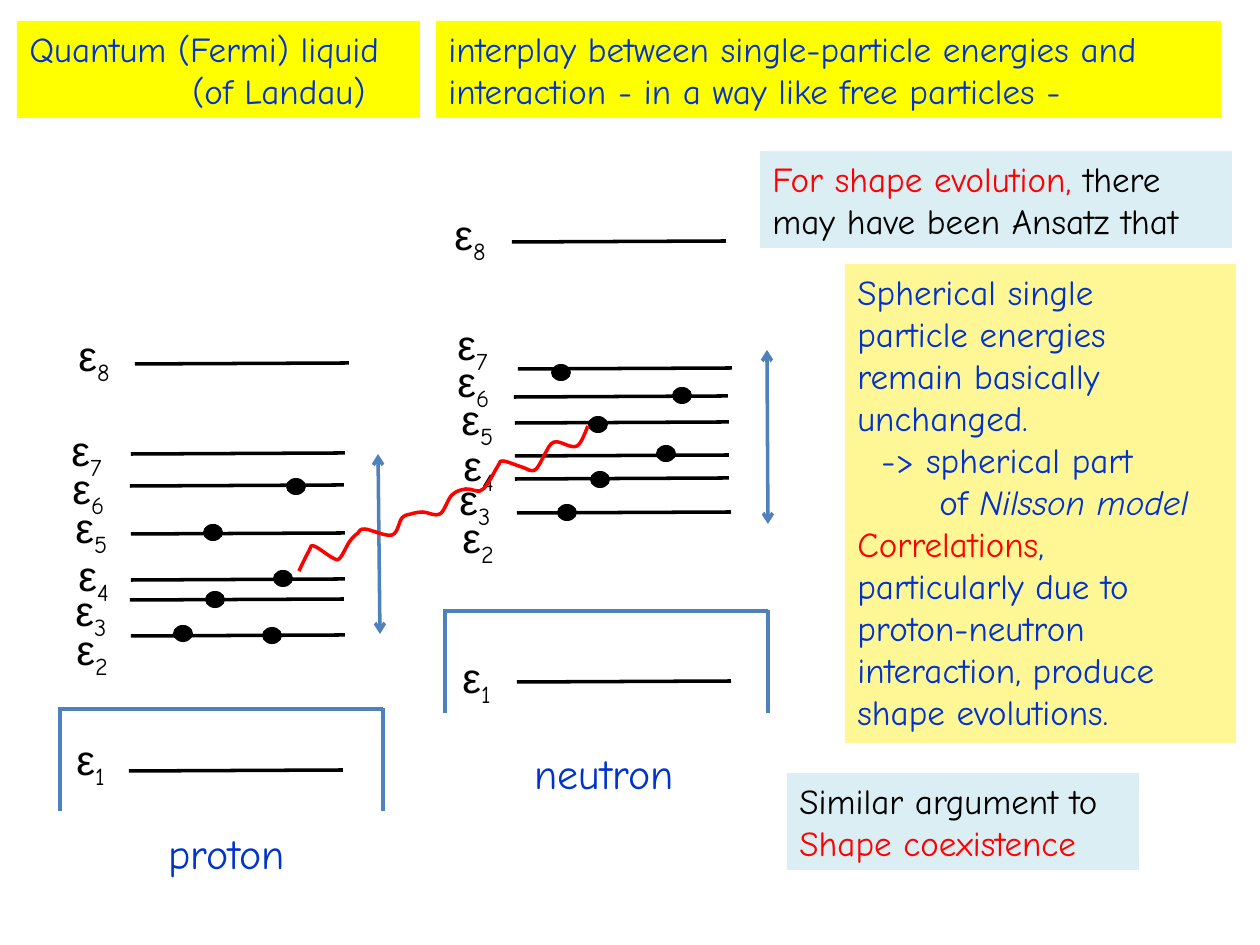
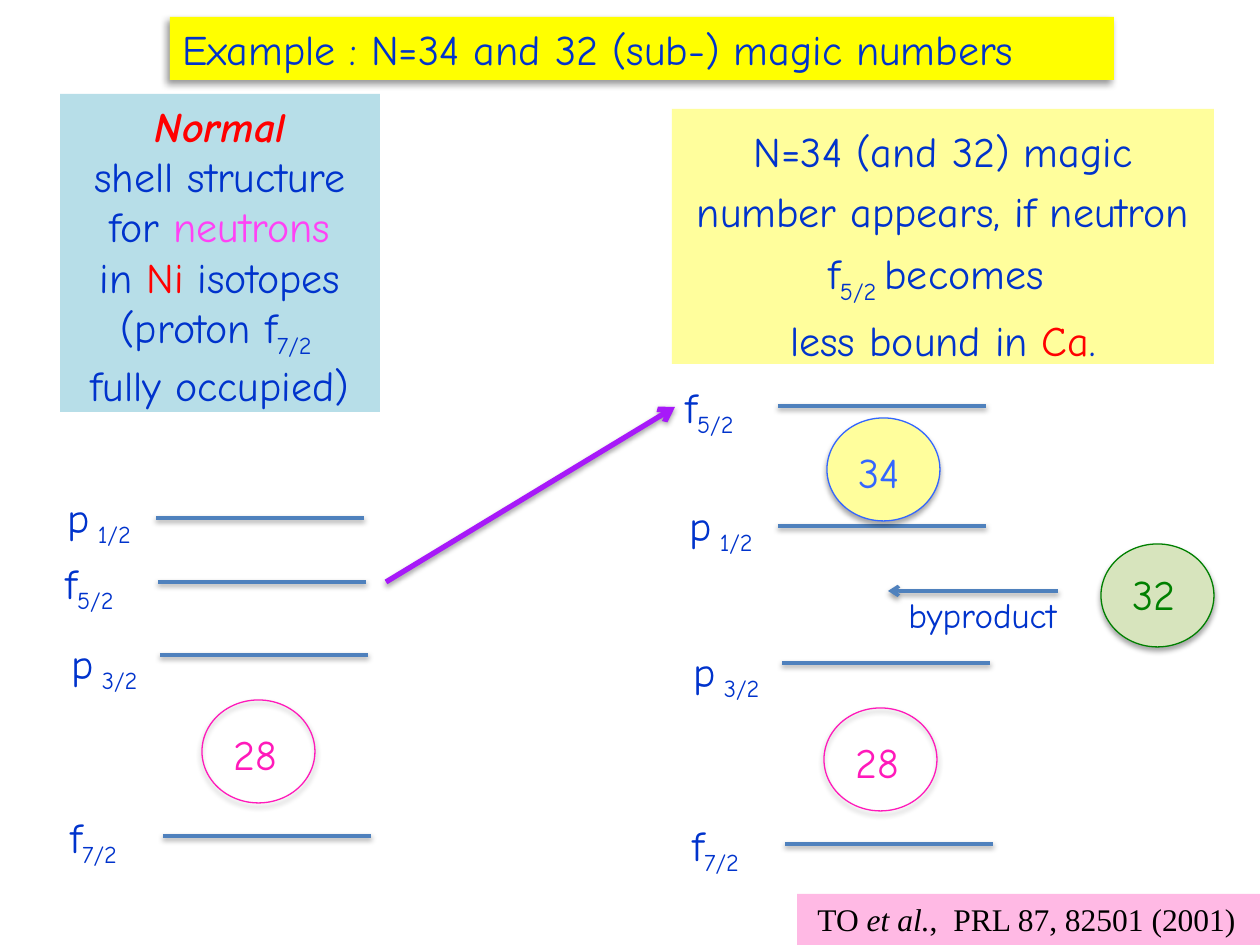
from lxml import etree
from pptx import Presentation
from pptx import util as u
from pptx.dml.color import RGBColor
from pptx.enum import shapes, text
from pptx.oxml.ns import qn

EMU_PER_PX = 914400 / 126
HAND, PLAIN, SERIF = "Comic Neue", "Arial", "Times New Roman"
BLACK, INK, RED, STEEL = "000000", "0033CC", "FF0000", "4F81BD"
YELLOW, CREAM, STRAW, ICE = "FFFF00", "FFFE9C", "FFF796", "DBEEF4"
SKY, ROSE, SAGE = "B7DEE8", "FFB9E4", "D7E4BD"
PINK, MAGENTA, BLUE, GREEN, PURPLE = "FF1ABA", "FF42F5", "3366FF", "008000", "A719F9"
LINE_SHADOW, DISC_SHADOW, TITLE_SHADOW = (38, 3.1, 1.6, 90), (35, 3.1, 1.8, 90), (40, 4, 3, 135)
OVAL, RECT = shapes.MSO_SHAPE.OVAL, shapes.MSO_SHAPE.RECTANGLE

PROTON_LEVELS = [
    ((4, 18), (69, 62), []),
    ((4, -92), (71, -73), [(42, -11), (131, -9)]),
    ((3, -131), (70, -109), [(75, -9)]),
    ((6, -166), (71, -129), [(142, -10)]),
    ((3, -214), (71, -175), [(72, -10)]),
    ((0, -253), (70, -223), [(156, -8)]),
    ((-1, -291), (71, -255), []),
    ((6, -386), (75, -345), []),
]
NEUTRON_LEVELS = [
    ((5, 34), (72, 71), []),
    ((5, -106), (72, -98), [(40, -9)]),
    ((2, -144), (70, -132), [(75, -8)]),
    ((6, -178), (70, -155), [(141, -11)]),
    ((4, -224), (70, -188), [(73, -7)]),
    ((0, -262), (69, -214), [(158, -10)]),
    ((0, -299), (73, -242), [(33, -5)]),
    ((-3, -409), (67, -369), []),
]
WAVE = [
    (299, 571), (309, 551), (314, 546), (333, 558), (340, 558), (350, 541), (358, 533),
    (365, 529), (392, 535), (402, 518), (411, 514), (423, 512), (440, 514), (452, 495),
    (466, 489), (480, 491), (488, 483), (498, 466), (503, 461), (522, 467), (535, 470),
    (546, 452), (551, 444), (558, 442), (577, 446), (588, 426),
]


def px(length):
    """Turn px into EMU."""
    return u.Emu(round(length * EMU_PER_PX))


def rgb(value):
    """Turn a hex string into a colour."""
    return RGBColor.from_string(value)


def style(font, size=None, name=None, color=None, bold=None, italic=None):
    """Set the given font properties."""
    if size:
        font.size = u.Pt(size)
    if name:
        font.name = name
    if color:
        font.color.rgb = rgb(color)
    if bold is not None:
        font.bold = bold
    if italic is not None:
        font.italic = italic


def sub(letters):
    """Describe a subscript run."""
    return letters, {"lowered": True}


def write(frame, paragraphs, size=20, color=INK, name=HAND, center=False, spacing=None, indents=None):
    """Fill a text frame; a paragraph is a list of strings or (string, style) pairs."""
    frame.vertical_anchor = text.MSO_ANCHOR.TOP
    for number, runs in enumerate(paragraphs):
        paragraph = frame.add_paragraph() if number else frame.paragraphs[0]
        paragraph.alignment = text.PP_ALIGN.CENTER if center else text.PP_ALIGN.LEFT
        if spacing:
            paragraph.line_spacing = spacing
        if indents and number in indents:
            paragraph._p.get_or_add_pPr().set("marL", str(px(indents[number])))
        style(paragraph.font, size, name, color)
        for item in runs:
            words, look = (item, {}) if isinstance(item, str) else item
            run = paragraph.add_run()
            run.text = words
            if look.get("lowered"):
                run._r.get_or_add_rPr().set("baseline", "-25000")
            else:
                style(run.font, **look)


def cast_shadow(effects, alpha, blur, distance, angle):
    """Add a black outer shadow to an effect list."""
    shadow = etree.SubElement(
        effects, qn("a:outerShdw"), blurRad=str(u.Pt(blur)), dist=str(u.Pt(distance)),
        dir=str(angle * 60000), rotWithShape="0")
    black = etree.SubElement(shadow, qn("a:srgbClr"), val=BLACK)
    etree.SubElement(black, qn("a:alpha"), val=str(alpha * 1000))


def line(slide, start, end, color=STEEL, width=2, ends=(), shadow=None):
    """Draw a straight line, with arrowheads at the named ends."""
    stroke = slide.shapes.add_connector(
        shapes.MSO_CONNECTOR.STRAIGHT, *map(px, (*start, *end)))
    stroke.line.color.rgb = rgb(color)
    stroke.line.width = u.Pt(width)
    for end_name in ends:
        etree.SubElement(stroke.line._get_or_add_ln(), qn(f"a:{end_name}"), type="arrow")
    effects = etree.SubElement(stroke._element.spPr, qn("a:effectLst"))
    if shadow:
        cast_shadow(effects, *shadow)


def figure(slide, kind, box, fill=None, outline=None, shadow=None):
    """Draw a preset shape in a box."""
    drawn = slide.shapes.add_shape(kind, *map(px, box))
    drawn.shadow.inherit = False
    if fill:
        drawn.fill.solid()
        drawn.fill.fore_color.rgb = rgb(fill)
    else:
        drawn.fill.background()
    if outline:
        drawn.line.color.rgb = rgb(outline)
        drawn.line.width = u.Pt(0.75)
    else:
        drawn.line.fill.background()
    if shadow:
        cast_shadow(drawn._element.spPr.find(qn("a:effectLst")), *shadow)
    return drawn


def panel(slide, box, fill, paragraphs, shadow=None, **look):
    """Draw a filled rectangle that holds text."""
    frame = figure(slide, RECT, box, fill, shadow=shadow).text_frame
    frame.word_wrap = True
    write(frame, paragraphs, **look)


def label(slide, box, runs, size=24, color=INK):
    """Write one unwrapped line of text."""
    frame = slide.shapes.add_textbox(*map(px, box)).text_frame
    frame.word_wrap = False
    frame.auto_size = text.MSO_AUTO_SIZE.SHAPE_TO_FIT_TEXT
    write(frame, [runs], size, color)


def nucleus(slide, x, y, levels, arrow, name, name_box):
    """Draw the levels, particles and core bracket of one kind of nucleon."""
    for number, ((label_x, label_y), (level_x, level_y), particles) in enumerate(levels, 1):
        left, top = x + level_x, y + level_y
        line(slide, (left, top), (left + 214, top - 1), BLACK)
        for dx, dy in particles:
            figure(slide, OVAL, (left + dx, top + dy, 20, 17), BLACK)
        label(slide, (x + label_x, y + label_y, 62, 54),
              [("ε", {"name": PLAIN}), sub(str(number))], color=BLACK)
    (start_x, start_y), (end_x, end_y) = arrow
    line(slide, (x + start_x, y + start_y), (x + end_x, y + end_y), ends=("headEnd", "tailEnd"))
    line(slide, (x - 2, y), (x + 323, y))
    for side in (x, x + 323):
        line(slide, (side, y - 1), (side, y + 102))
    name_x, name_y, width, height = name_box
    label(slide, (x + name_x, y + name_y, width, height), [name])


def wave(slide, knots):
    """Draw a smooth red curve through the knots."""
    padded = [knots[0], *knots, knots[-1]]
    points = []
    for before, start, end, after in zip(padded, padded[1:], padded[2:], padded[3:]):
        points.append([s + (e - b) / 6 for b, s, e in zip(before, start, end)])
        points.append([e - (a - s) / 6 for s, e, a in zip(start, end, after)])
        points.append(end)
    builder = slide.shapes.build_freeform(*map(px, knots[0]), scale=1.0)
    builder.add_line_segments([(px(x), px(y)) for x, y in points], close=False)
    curve = builder.convert_to_shape()
    segments = list(curve._element.iter(qn("a:lnTo")))
    for first in range(0, len(segments), 3):
        bend = etree.SubElement(segments[first].getparent(), qn("a:cubicBezTo"))
        for segment in segments[first:first + 3]:
            bend.append(segment[0])
            segment.getparent().remove(segment)
    curve.shadow.inherit = False
    curve.fill.background()
    curve.line.color.rgb = rgb(RED)
    curve.line.width = u.Pt(2)


def magic_number(slide, x, y, number, color, fill=None, drop=22):
    """Draw a circled magic number."""
    figure(slide, OVAL, (x, y, 113, 103), fill, color, DISC_SHADOW)
    label(slide, (x + 19, y + drop, 81, 63), [number], color=color)


def shell(slide, x, y, f5_shift=(0, 0)):
    """Draw one shell scheme, with its f5/2 level moved by f5_shift."""
    levels = [
        (["f", sub("7/2")], (5, 320), (110, 351), (0, 0)),
        (["p", sub(" 3/2")], (6, 146), (107, 170), (0, 0)),
        (["p", sub(" 1/2")], (2, 0), (103, 33), (0, 0)),
        (["f", sub("5/2")], (0, 66), (105, 97), f5_shift),
    ]
    for orbit, (label_x, label_y), (level_x, level_y), (dx, dy) in levels:
        left, top = x + level_x + dx, y + level_y + dy
        line(slide, (left, top), (left + 208, top), shadow=LINE_SHADOW)
        label(slide, (x + label_x + dx, y + label_y + dy, 100, 63), orbit)
    magic_number(slide, x + 149, y + 215, "28", PINK)


def fermi_liquid_slide(slide):
    """Build the slide on single-particle energies and interaction."""
    red = {"color": RED}
    panel(slide, (17, 21, 403, 97), YELLOW,
          [["Quantum (Fermi) liquid"], ["(of Landau)"]], indents={1: 163})
    nucleus(slide, 445, 611, NEUTRON_LEVELS, ((322, -261), (323, -87)),
            "neutron", (77, 130, 178, 63))
    panel(slide, (436, 21, 785, 97), YELLOW,
          [["interplay between single-particle energies and"],
           ["interaction - in a way like free particles -"]])
    nucleus(slide, 60, 709, PROTON_LEVELS, ((318, -255), (320, -75)),
            "proton", (96, 112, 155, 63))
    wave(slide, WAVE)
    panel(slide, (760, 151, 472, 97), ICE,
          [[("For shape evolution, ", red), "there"], ["may have been Ansatz that"]], color=BLACK)
    panel(slide, (845, 264, 391, 479), STRAW, [
        ["Spherical single"], ["particle energies"], ["remain basically"], ["unchanged."],
        ["-> spherical part"], ["of ", ("Nilsson model", {"italic": True})],
        [("Correlations", red), ","],
        ["particularly due to proton-neutron interaction, produce shape evolutions."],
    ], indents={4: 24, 5: 82})
    panel(slide, (787, 773, 352, 97), ICE,
          [["Similar argument to"], [("Shape coexistence", red)]], color=BLACK)


def magic_numbers_slide(slide):
    """Build the slide on the magic numbers 32 and 34."""
    red = {"color": RED}
    shell(slide, 53, 485)
    panel(slide, (60, 94, 320, 318), SKY, [
        [("Normal", {"color": RED, "bold": True, "italic": True})],
        ["shell structure"], ["for ", ("neutrons", {"color": MAGENTA})],
        ["in ", ("Ni ", red), "isotopes"], ["(proton f", sub("7/2 ")], ["fully occupied)"],
    ], size=24, center=True)
    panel(slide, (672, 109, 542, 255), CREAM, [
        ["N=34 (and 32) magic number appears, if neutron f", sub("5/2 "), "becomes "],
        ["less bound in ", ("Ca", red), "."],
    ], size=24, center=True, spacing=1.2)
    shell(slide, 675, 493, f5_shift=(-2, -184))
    magic_number(slide, 827, 418, "34", BLUE, CREAM)
    magic_number(slide, 1101, 544, "32", GREEN, SAGE, drop=18)
    line(slide, (1058, 591), (888, 591), ends=("tailEnd",), shadow=LINE_SHADOW)
    label(slide, (896, 587, 193, 55), ["byproduct"], size=20)
    panel(slide, (170, 17, 944, 63), YELLOW,
          [["Example : N=34 and 32 (sub-) magic numbers"]], TITLE_SHADOW, size=24)
    line(slide, (386, 582), (675, 407), PURPLE, 3, ("tailEnd",), LINE_SHADOW)
    panel(slide, (797, 894, 463, 51), ROSE,
          [["TO ", ("et al.", {"italic": True}), ",  PRL 87, 82501 (2001)"]],
          size=18, color=BLACK, name=SERIF, indents={0: 8})


def main():
    """Build and save the two slides."""
    deck = Presentation()
    deck.slide_width, deck.slide_height = px(1260), px(945)
    for build in (fermi_liquid_slide, magic_numbers_slide):
        build(deck.slides.add_slide(deck.slide_layouts[6]))
    deck.save("out.pptx")


if __name__ == "__main__":
    main()
